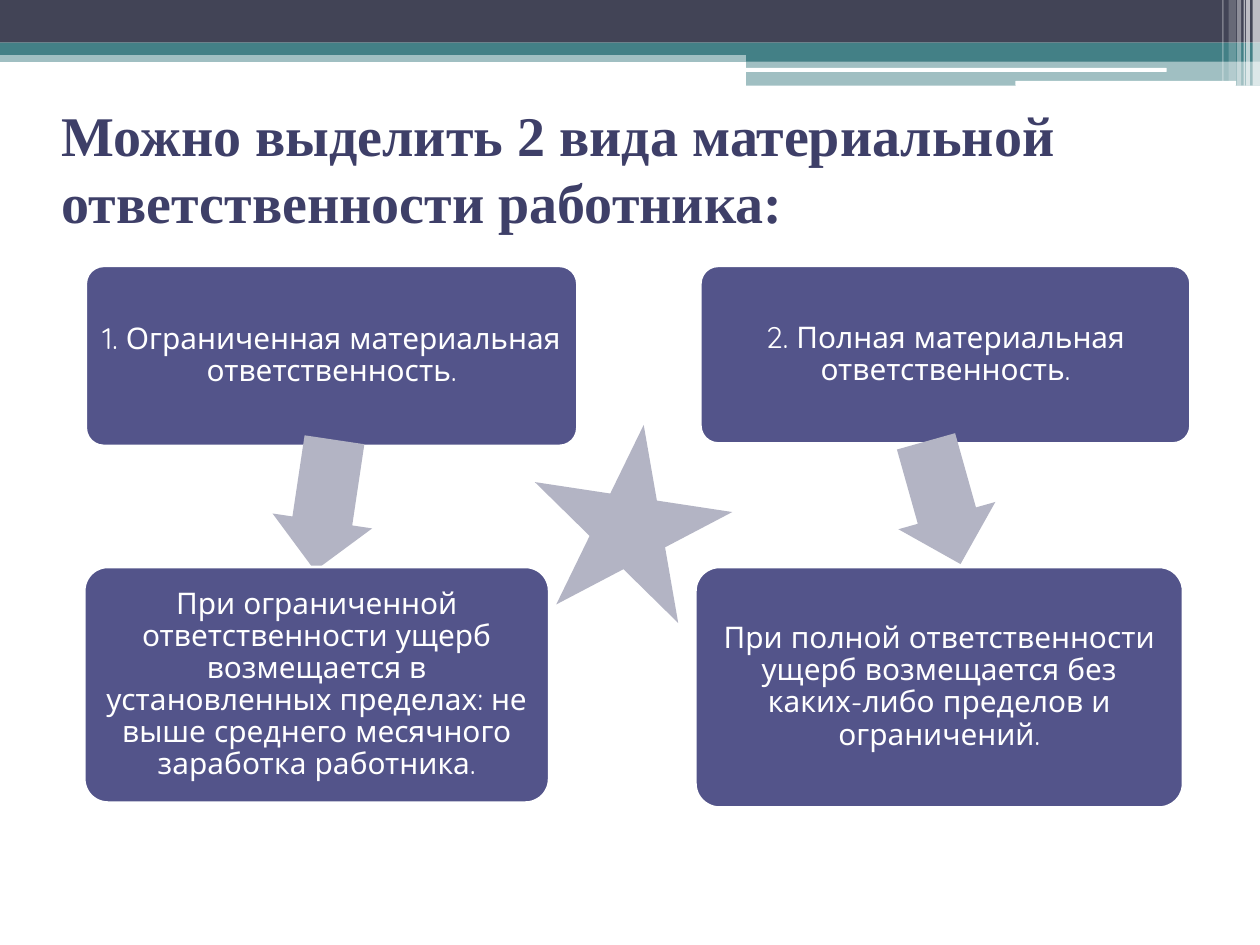
from lxml import etree
from pptx import Presentation
from pptx.dml.color import RGBColor
from pptx.enum.shapes import MSO_SHAPE
from pptx.enum.text import MSO_ANCHOR, MSO_AUTO_SIZE, PP_ALIGN
from pptx.oxml.ns import qn
from pptx.util import Cm, Pt

RECT = MSO_SHAPE.RECTANGLE
ROUND = MSO_SHAPE.ROUNDED_RECTANGLE
ARROW = MSO_SHAPE.RIGHT_ARROW
STAR = MSO_SHAPE.STAR_5_POINT
MIDDLE = MSO_ANCHOR.MIDDLE
LEFT = PP_ALIGN.LEFT
CENTER = PP_ALIGN.CENTER

COLORS = {
    "dark": "424456",
    "teal": "438086",
    "white": "FFFFFF",
    "title": "3E3F68",
    "box": "53548A",
    "accent": "B3B4C4",
}

BANDS = [
    (RECT, 0, 1.02, 25.4, 0.23, "teal", 50),
    (RECT, 0, 0, 25.4, 0.86, "dark", 100),
    (RECT, 0, 0.86, 25.4, 0.25, "teal", 100),
    (RECT, 15.04, 0.99, 10.36, 0.25, "teal", 100),
    (RECT, 15.04, 1.22, 10.36, 0.51, "teal", 50),
    (ROUND, 15.01, 1.37, 8.51, 0.08, "white", 100),
    (ROUND, 20.47, 1.63, 4.45, 0.1, "white", 100),
]

STRIPES = [
    (25.25, 0.15, 1.73, 65),
    (25.12, 0.08, 1.73, 65),
    (25.07, 0.03, 1.73, 60),
    (24.94, 0.08, 1.73, 40),
    (24.77, 0.15, 1.63, 20),
    (24.64, 0.03, 1.63, 30),
]


def color(name):
    return RGBColor.from_string(COLORS[name])


def write(frame, text, font, size, ink, bold=False, align=CENTER, space=1.0):
    frame.word_wrap = True
    frame.auto_size = MSO_AUTO_SIZE.NONE
    frame.vertical_anchor = MIDDLE
    line = frame.paragraphs[0]
    line.alignment = align
    line.line_spacing = space
    run = line.add_run()
    run.text = text
    run.font.name = font
    run.font.size = Pt(size)
    run.font.bold = bold
    run.font.color.rgb = color(ink)


def add_form(slide, kind, x, y, w, h, paint, alpha=100, turn=0):
    form = slide.shapes.add_shape(kind, Cm(x), Cm(y), Cm(w), Cm(h))
    form.shadow.inherit = False
    form.rotation = turn
    form.line.fill.background()
    form.fill.solid()
    form.fill.fore_color.rgb = color(paint)
    if alpha < 100:
        tone = form.fill._xPr.find(".//" + qn("a:srgbClr"))
        etree.SubElement(tone, qn("a:alpha"), val=str(alpha * 1000))
    return form


def add_box(slide, text, x, y, w, h):
    box = add_form(slide, ROUND, x, y, w, h, "box")
    box.adjustments[0] = 0.1
    box.line.color.rgb = color("white")
    box.line.width = Pt(1.5)
    frame = box.text_frame
    frame.margin_left = frame.margin_right = Cm(0.17)
    frame.margin_top = frame.margin_bottom = Cm(0.17)
    write(frame, text, "Quicksand", 17, "white", space=0.9)


def add_arrow(slide, x, y, w, h, turn):
    arrow = add_form(slide, ARROW, x, y, w, h, "accent", turn=turn)
    arrow.adjustments[0] = 0.6
    arrow.adjustments[1] = 0.5


def add_header(slide):
    for kind, x, y, w, h, paint, alpha in BANDS:
        band = add_form(slide, kind, x, y, w, h, paint, alpha)
        if kind == ROUND:
            band.adjustments[0] = 0.17
    for x, w, h, alpha in STRIPES:
        add_form(slide, RECT, x, 0, w, h, "white", alpha)


def add_title(slide, text):
    title = slide.shapes.title
    title.left, title.top = Cm(0.99), Cm(1.9)
    title.width, title.height = Cm(22.86), Cm(2.97)
    write(title.text_frame, text, "Times New Roman", 32, "title",
          bold=True, align=LEFT)


def main():
    deck = Presentation()
    deck.slide_width, deck.slide_height = Cm(25.4), Cm(19.05)
    slide = deck.slides.add_slide(deck.slide_layouts[5])
    add_header(slide)
    add_title(slide, "Можно выделить 2 вида материальной "
                     "ответственности работника:")
    add_box(slide, "1. Ограниченная материальная ответственность.",
            1.73, 5.36, 9.91, 3.63)
    add_arrow(slide, 5.21, 9.17, 2.67, 2.03, 98.5)
    add_box(slide, "При ограниченной ответственности ущерб возмещается в "
                   "установленных пределах: не выше среднего месячного "
                   "заработка работника.",
            1.7, 11.43, 9.37, 4.75)
    add_form(slide, STAR, 10.77, 8.92, 4.01, 3.86, "accent", turn=152.3)
    add_box(slide, "2. Полная материальная ответственность.",
            14.12, 5.36, 9.88, 3.58)
    add_arrow(slide, 17.73, 9.12, 2.57, 2.03, 74.3)
    add_box(slide, "При полной ответственности ущерб возмещается без "
                   "каких-либо пределов и ограничений.",
            14.02, 11.43, 9.83, 4.85)
    deck.save("out.pptx")


if __name__ == "__main__":
    main()
